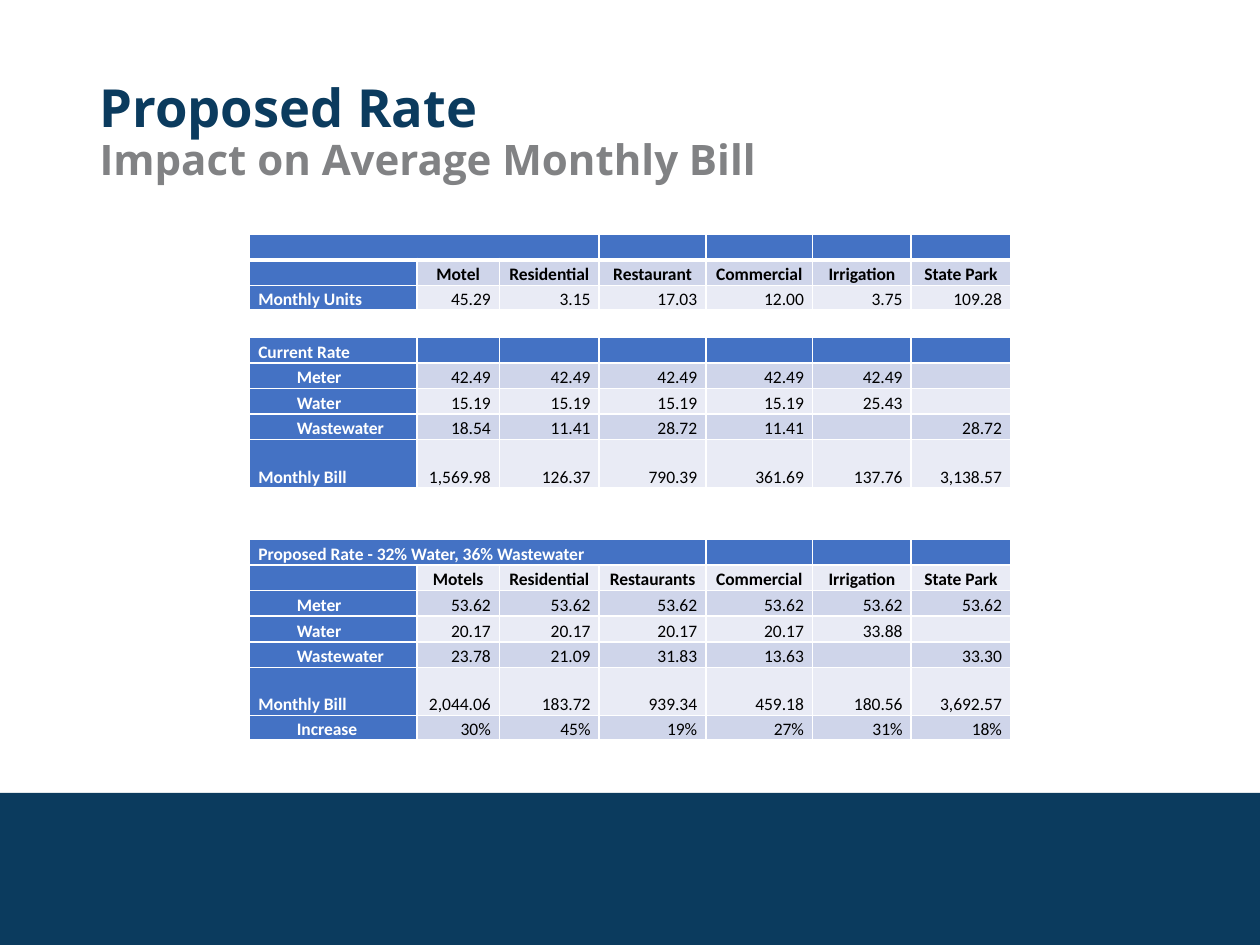
from lxml import etree
from pptx import Presentation
from pptx.dml.color import RGBColor
from pptx.enum.shapes import MSO_SHAPE
from pptx.enum.text import MSO_ANCHOR, MSO_AUTO_SIZE, PP_ALIGN
from pptx.oxml.ns import qn
from pptx.util import Pt

RECTANGLE = MSO_SHAPE.RECTANGLE
MIDDLE, BOTTOM = MSO_ANCHOR.MIDDLE, MSO_ANCHOR.BOTTOM
NO_AUTOFIT = MSO_AUTO_SIZE.NONE
LEFT, CENTER, RIGHT = PP_ALIGN.LEFT, PP_ALIGN.CENTER, PP_ALIGN.RIGHT

NAVY = RGBColor(0x0B, 0x3B, 0x5E)
GRAY = RGBColor(0x81, 0x82, 0x84)
BLUE = RGBColor(0x44, 0x72, 0xC4)
DARK_BAND = RGBColor(0xCF, 0xD5, 0xEA)
LIGHT_BAND = RGBColor(0xE9, 0xEB, 0xF5)
WHITE = RGBColor(0xFF, 0xFF, 0xFF)
BLACK = RGBColor(0, 0, 0)

TITLE_BOX = (49.7, 28.8, 620.6, 95)
TABLE_BOX = (142.6, 134, 435, 288.2)
BAND_BOX = (0, 453, 720, 87)

COLUMN_WIDTHS = (95.6, 47.2, 57, 61, 61, 56.4, 56.8)
INDENTED = {"Meter", "Water", "Wastewater", "Increase"}

# Each row: height, band colour (BLUE: heading, None: gap), cell texts
ROWS = [
    (14.6, BLUE, []),
    (14.6, DARK_BAND, ["", "Motel", "Residential", "Restaurant", "Commercial",
                       "Irrigation", "State Park"]),
    (13.4, LIGHT_BAND, ["Monthly Units", "45.29", "3.15", "17.03", "12.00", "3.75", "109.28"]),
    (15.6, None, []),
    (14.6, BLUE, ["Current Rate"]),
    (14.6, DARK_BAND, ["Meter", "42.49", "42.49", "42.49", "42.49", "42.49", ""]),
    (14.6, LIGHT_BAND, ["Water", "15.19", "15.19", "15.19", "15.19", "25.43", ""]),
    (14.6, DARK_BAND, ["Wastewater", "18.54", "11.41", "28.72", "11.41", "", "28.72"]),
    (27.6, LIGHT_BAND, ["Monthly Bill", "1,569.98", "126.37", "790.39", "361.69",
                        "137.76", "3,138.57"]),
    (14.8, None, []),
    (14.8, None, []),
    (14.6, BLUE, ["Proposed Rate - 32% Water, 36% Wastewater"]),
    (14.6, LIGHT_BAND, ["", "Motels", "Residential", "Restaurants", "Commercial",
                        "Irrigation", "State Park"]),
    (14.6, DARK_BAND, ["Meter", "53.62", "53.62", "53.62", "53.62", "53.62", "53.62"]),
    (14.6, LIGHT_BAND, ["Water", "20.17", "20.17", "20.17", "20.17", "33.88", ""]),
    (14.6, DARK_BAND, ["Wastewater", "23.78", "21.09", "31.83", "13.63", "", "33.30"]),
    (27.6, LIGHT_BAND, ["Monthly Bill", "2,044.06", "183.72", "939.34", "459.18",
                        "180.56", "3,692.57"]),
    (13.8, DARK_BAND, ["Increase", "30%", "45%", "19%", "27%", "31%", "18%"]),
]
COLUMN_NAME_ROWS = {1, 12}
MERGED_COLUMNS = {0: 2, 11: 3}  # row: last column joined to the first


def set_values(target, values):
    for name, value in values.items():
        setattr(target, name, value)


def place(shape, box):
    names = ("left", "top", "width", "height")
    set_values(shape, dict(zip(names, map(Pt, box))))


def add_text(para, text, size, color, font, bold=True):
    span = para.add_run()
    span.text = text
    set_values(span.font, {"size": Pt(size), "name": font, "bold": bold})
    span.font.color.rgb = color


def set_borders(cell, bottom_width):
    """Draw white lines on all four sides of a cell."""
    properties = cell._tc.get_or_add_tcPr()
    widths = {"a:lnL": 1, "a:lnR": 1, "a:lnT": 1, "a:lnB": bottom_width}
    for position, (tag, width) in enumerate(widths.items()):
        line = etree.Element(qn(tag), w=str(Pt(width)))
        fill = etree.SubElement(line, qn("a:solidFill"))
        etree.SubElement(fill, qn("a:srgbClr"), val=str(WHITE))
        properties.insert(position, line)


def fill_cell(cell, text, fill, align, color, bold):
    set_values(cell, {"vertical_anchor": BOTTOM, "margin_left": Pt(5), "margin_right": Pt(5),
                      "margin_top": 0, "margin_bottom": 0})
    if fill is None:
        cell.fill.background()
    else:
        cell.fill.solid()
        cell.fill.fore_color.rgb = fill
    para = cell.text_frame.paragraphs[0]
    if not text:
        etree.SubElement(para._p, qn("a:endParaRPr"), sz="1000")
        return
    set_values(para, {"alignment": align, "line_spacing": 1.15, "space_after": Pt(8)})
    if text in INDENTED:
        para._p.get_or_add_pPr().set("indent", str(Pt(22)))
    add_text(para, text, 10, color, "Calibri", bold)


def add_bill_table(page, box):
    frame = page.shapes.add_table(len(ROWS), len(COLUMN_WIDTHS), *map(Pt, box))
    table = frame.table
    set_values(table, {"first_row": False, "horz_banding": False})
    for column, width in zip(table.columns, COLUMN_WIDTHS):
        column.width = Pt(width)
    for row, (height, band, texts) in enumerate(ROWS):
        table.rows[row].height = Pt(height)
        is_names = row in COLUMN_NAME_ROWS
        for column in range(len(COLUMN_WIDTHS)):
            cell = table.cell(row, column)
            text = texts[column] if column < len(texts) else ""
            if column == 0:
                fill_cell(cell, text, BLUE if band else None, LEFT, WHITE, True)
            else:
                fill_cell(cell, text, band, CENTER if is_names else RIGHT, BLACK, is_names)
            set_borders(cell, 3 if row == 0 else 1)
    for row, last_column in MERGED_COLUMNS.items():
        table.cell(row, 0).merge(table.cell(row, last_column))


def add_title(page, box):
    title = page.shapes.title
    place(title, box)
    set_values(title.text_frame, {"vertical_anchor": MIDDLE, "word_wrap": True,
                                  "auto_size": NO_AUTOFIT})
    para = title.text_frame.paragraphs[0]
    set_values(para, {"alignment": LEFT, "line_spacing": 0.9})
    add_text(para, "Proposed Rate", 30, NAVY, "Open Sans")
    para.add_line_break()
    add_text(para, "Impact on Average Monthly Bill", 24, GRAY, "Open Sans")


def add_footer_band(page, box):
    band = page.shapes.add_shape(RECTANGLE, *map(Pt, box))
    band.shadow.inherit = False
    band.fill.solid()
    band.fill.fore_color.rgb = NAVY
    band.line.fill.background()


def main():
    deck = Presentation()
    set_values(deck, {"slide_width": Pt(720), "slide_height": Pt(540)})
    page = deck.slides.add_slide(deck.slide_layouts.get_by_name("Title Only"))
    add_footer_band(page, BAND_BOX)
    add_title(page, TITLE_BOX)
    add_bill_table(page, TABLE_BOX)
    deck.save("out.pptx")


if __name__ == "__main__":
    main()
